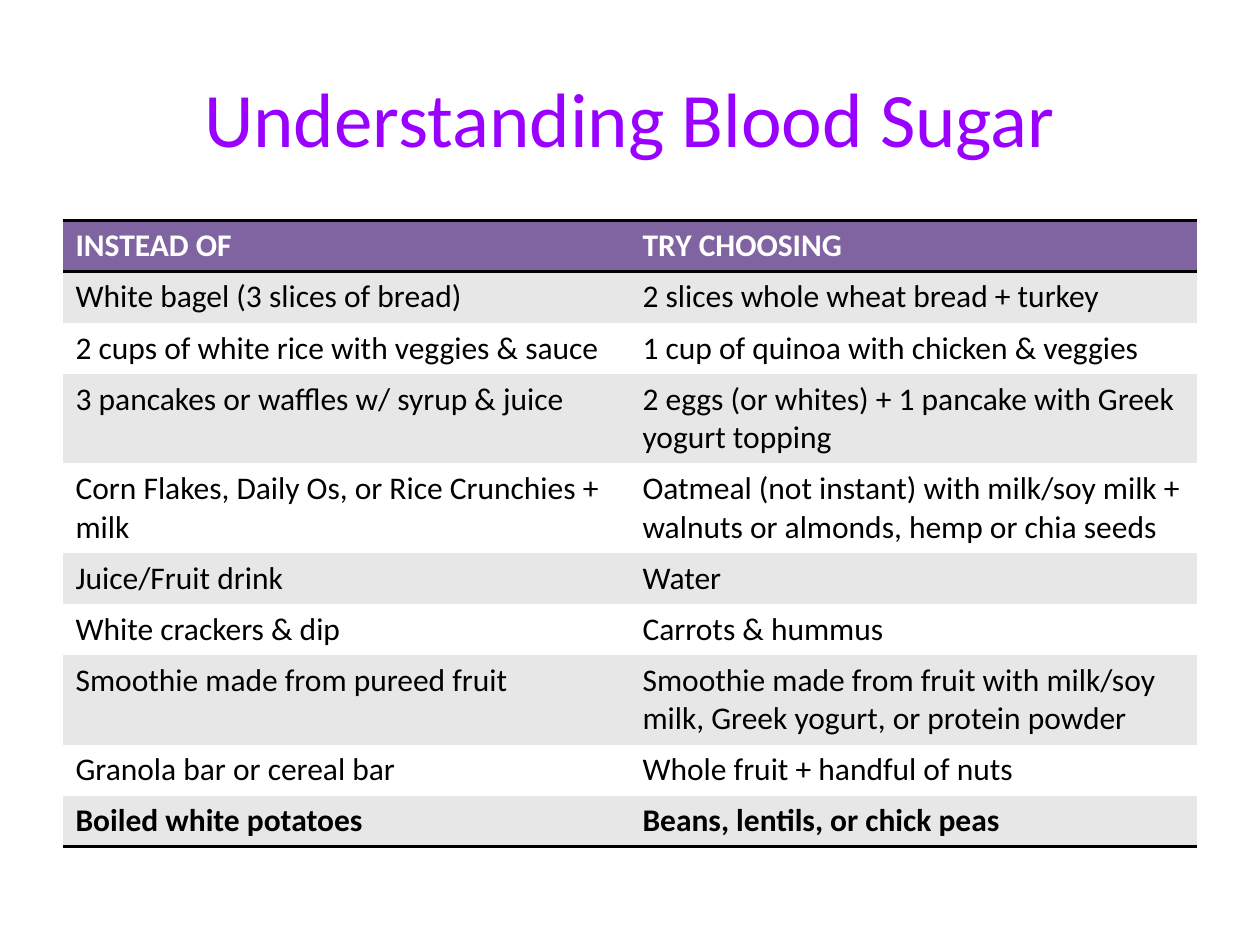
from lxml import etree
from pptx import Presentation
from pptx.dml.color import RGBColor
from pptx.enum import text
from pptx.oxml import ns
from pptx.util import Pt

# Content
HEADING = "Understanding Blood Sugar"
SWAPS = [
    ("INSTEAD OF", "TRY CHOOSING"),
    ("White bagel (3 slices of bread)", "2 slices whole wheat bread + turkey"),
    ("2 cups of white rice with veggies & sauce", "1 cup of quinoa with chicken & veggies"),
    ("3 pancakes or waffles w/ syrup & juice",
     "2 eggs (or whites) + 1 pancake with Greek yogurt topping"),
    ("Corn Flakes, Daily Os, or Rice Crunchies + milk",
     "Oatmeal (not instant) with milk/soy milk + walnuts or almonds, hemp or chia seeds"),
    ("Juice/Fruit drink", "Water"),
    ("White crackers & dip", "Carrots & hummus"),
    ("Smoothie made from pureed fruit",
     "Smoothie made from fruit with milk/soy milk, Greek yogurt, or protein powder"),
    ("Granola bar or cereal bar", "Whole fruit + handful of nuts"),
    ("Boiled white potatoes", "Beans, lentils, or chick peas"),
]

# Theme
THEME = {
    "font": "Calibri", "heading_size": 44, "cell_size": 18,
    "heading": "9900FF", "header_fill": "8064A2", "header_text": "FFFFFF",
    "bands": ("FFFFFF", "E7E7E7"), "body_text": "000000",
    "rule": "000000", "rule_width": 2,
}
PLAIN_TABLE_STYLE = "{2D5ABB26-0587-4C30-8999-92F81FD0307C}"  # no fill, no grid

# Layout in points
SLIDE_W, SLIDE_H = 720, 540
MARGIN = 36
CONTENT_W = SLIDE_W - 2 * MARGIN
HEADING_TOP, HEADING_H = 21.6, 90
TABLE_TOP, ROW_H = 126, 29.2


def style_runs(paragraph, size, color, bold=False):
    for run in paragraph.runs:
        run.font.name = THEME["font"]
        run.font.size = Pt(size)
        run.font.bold = bold
        run.font.color.rgb = RGBColor.from_string(color)


def add_rules(cell, sides):
    """Draw horizontal rules; the lines must precede the cell's fill."""
    properties = cell._tc.get_or_add_tcPr()
    for position, side in enumerate(sides):
        line = etree.Element(ns.qn(f"a:ln{side}"), w=str(Pt(THEME["rule_width"])))
        fill = etree.SubElement(line, ns.qn("a:solidFill"))
        etree.SubElement(fill, ns.qn("a:srgbClr"), val=THEME["rule"])
        properties.insert(position, line)


def add_heading(slide):
    heading = slide.shapes.title
    heading.left, heading.top = Pt(MARGIN), Pt(HEADING_TOP)
    heading.width, heading.height = Pt(CONTENT_W), Pt(HEADING_H)
    frame = heading.text_frame
    frame.text = HEADING
    frame.vertical_anchor = text.MSO_ANCHOR.MIDDLE
    frame.paragraphs[0].alignment = text.PP_ALIGN.CENTER
    style_runs(frame.paragraphs[0], THEME["heading_size"], THEME["heading"])


def add_swaps(slide):
    last = len(SWAPS) - 1
    swaps = slide.shapes.add_table(
        len(SWAPS), len(SWAPS[0]), Pt(MARGIN), Pt(TABLE_TOP),
        Pt(CONTENT_W), Pt(ROW_H * len(SWAPS))).table
    swaps._tbl.tblPr.find(ns.qn("a:tableStyleId")).text = PLAIN_TABLE_STYLE
    for r, foods in enumerate(SWAPS):
        header = r == 0
        fill = THEME["header_fill"] if header else THEME["bands"][r % 2]
        color = THEME["header_text"] if header else THEME["body_text"]
        sides = "TB" if header else "B" if r == last else ""
        for c, food in enumerate(foods):
            cell = swaps.cell(r, c)
            cell.text_frame.text = food
            style_runs(cell.text_frame.paragraphs[0], THEME["cell_size"],
                       color, bold=r in (0, last))
            cell.fill.solid()
            cell.fill.fore_color.rgb = RGBColor.from_string(fill)
            add_rules(cell, sides)


def main():
    deck = Presentation()
    deck.slide_width, deck.slide_height = Pt(SLIDE_W), Pt(SLIDE_H)
    slide = deck.slides.add_slide(deck.slide_layouts[5])  # title only
    add_heading(slide)
    add_swaps(slide)
    deck.save("out.pptx")


if __name__ == "__main__":
    main()
